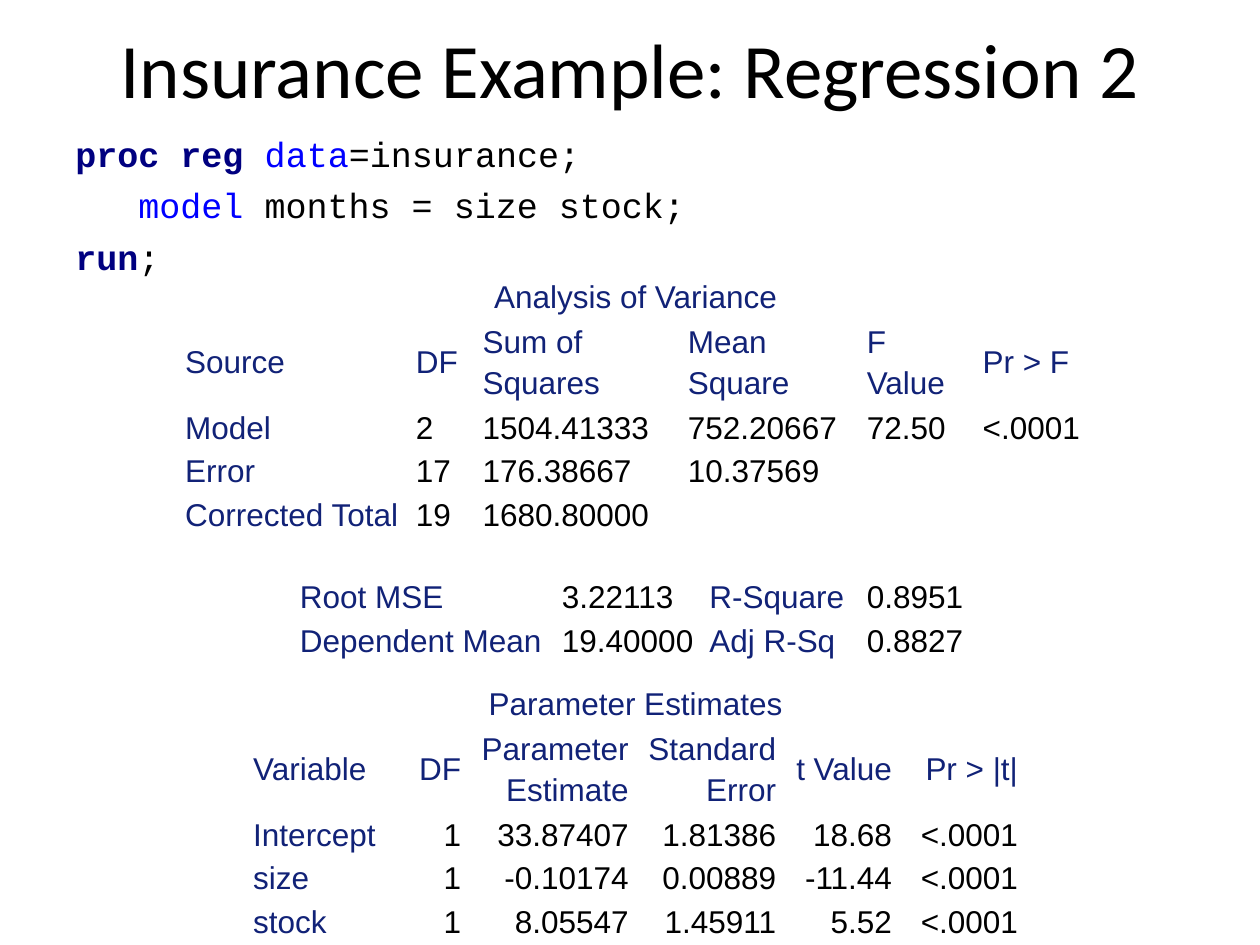
import dataclasses
import typing

import pptx
import pptx.dml.color
import pptx.enum.text
import pptx.util

Inches = pptx.util.Inches
Pt = pptx.util.Pt
Align = pptx.enum.text.PP_ALIGN
Anchor = pptx.enum.text.MSO_ANCHOR

BLACK, NAVY, BLUE, LABEL = "000000", "000080", "0000FF", "112277"
LINE = 0.32  # height of one line of table text, in inches


@dataclasses.dataclass
class Run:
    text: str
    hue: str = BLACK
    bold: bool = False


@dataclasses.dataclass
class Grid:
    left: float
    top: float
    widths: list[float]
    rows: list[list[str]]
    title: str = ""
    heads: int = 0  # heading rows, title included
    labels: tuple[int, ...] = (0,)  # columns that hold row names
    align: typing.Any = Align.LEFT  # alignment of the value columns


def apply(item: typing.Any, values: dict[str, typing.Any]) -> None:
    for name, value in values.items():
        setattr(item, name, value)


def style(font: typing.Any, face: str, size: float, hue: str, bold: bool = False) -> None:
    apply(font, {"name": face, "size": Pt(size), "bold": bold})
    font.color.rgb = pptx.dml.color.RGBColor.from_string(hue)


def add_box(slide: typing.Any, left: float, top: float, width: float,
            height: float, anchor: typing.Any) -> typing.Any:
    box = slide.shapes.add_textbox(*map(Inches, (left, top, width, height)))
    apply(box.text_frame, {"word_wrap": True, "vertical_anchor": anchor})
    return box.text_frame


def add_code(frame: typing.Any, lines: list[tuple[float, list[Run]]]) -> None:
    for num, (indent, runs) in enumerate(lines):
        para = frame.add_paragraph() if num else frame.paragraphs[0]
        para.space_before = Pt(5.5)
        para._p.get_or_add_pPr().set("marL", str(Inches(indent)))
        for part in runs:
            run = para.add_run()
            run.text = part.text
            style(run.font, "Courier New", 20, part.hue, part.bold)


def fill_cell(cell: typing.Any, text: str, hue: str, align: typing.Any) -> None:
    cell.fill.background()
    apply(cell, {"margin_left": Inches(0.05), "margin_right": Inches(0.05),
                 "margin_top": 0, "margin_bottom": 0,
                 "vertical_anchor": Anchor.MIDDLE})
    para = cell.text_frame.paragraphs[0]
    para.text = text
    apply(para, {"alignment": align, "line_spacing": 1.15,
                 "space_before": Pt(5), "space_after": Pt(5)})
    for run in para.runs:
        style(run.font, "Arial", 18, hue)


def add_grid(slide: typing.Any, grid: Grid) -> None:
    count = len(grid.widths)
    rows = list(grid.rows)
    if grid.title:
        rows.insert(0, [grid.title])
    tall = [LINE * (2 if any("\v" in text for text in row) else 1) for row in rows]
    table = slide.shapes.add_table(
        len(rows), count, Inches(grid.left), Inches(grid.top),
        Inches(sum(grid.widths)), Inches(sum(tall))).table
    apply(table, {"first_row": False, "horz_banding": False})
    for col, width in zip(table.columns, grid.widths):
        col.width = Inches(width)
    for y, row in enumerate(rows):
        table.rows[y].height = Inches(tall[y])
        for x in range(count):
            text = row[x] if x < len(row) else ""
            named = y < grid.heads or x in grid.labels
            align = Align.LEFT if x in grid.labels else grid.align
            if grid.title and y == 0:
                align = Align.CENTER
            fill_cell(table.cell(y, x), text, LABEL if named else BLACK, align)
    if grid.title:
        table.cell(0, 0).merge(table.cell(0, count - 1))


CODE = [
    (0, [Run("proc reg ", NAVY, True), Run("data", BLUE), Run("=insurance;")]),
    (0.5, [Run("model", BLUE), Run(" months = size stock;")]),
    (0, [Run("run", NAVY, True), Run(";")]),
]

GRIDS = [
    Grid(1.42, 2.17, [1.83, 0.53, 1.63, 1.42, 0.92, 0.92], [
        ["Source", "DF", "Sum of\vSquares", "Mean\vSquare", "F Value", "Pr > F"],
        ["Model", "2", "1504.41333", "752.20667", "72.50", "<.0001"],
        ["Error", "17", "176.38667", "10.37569"],
        ["Corrected Total", "19", "1680.80000"],
    ], title="Analysis of Variance", heads=2),
    Grid(2.33, 4.55, [2.08, 1.17, 1.25, 0.92], [
        ["Root MSE", "3.22113", "R-Square", "0.8951"],
        ["Dependent Mean", "19.40000", "Adj R-Sq", "0.8827"],
    ], labels=(0, 2)),
    Grid(1.96, 5.4, [1.2, 0.55, 1.33, 1.17, 0.92, 1], [
        ["Variable", "DF", "Parameter\vEstimate", "Standard\vError", "t Value", "Pr > |t|"],
        ["Intercept", "1", "33.87407", "1.81386", "18.68", "<.0001"],
        ["size", "1", "-0.10174", "0.00889", "-11.44", "<.0001"],
        ["stock", "1", "8.05547", "1.45911", "5.52", "<.0001"],
    ], title="Parameter Estimates", heads=2, align=Align.RIGHT),
]


def main() -> None:
    deck = pptx.Presentation()
    apply(deck, {"slide_width": Inches(10), "slide_height": Inches(7.5)})
    slide = deck.slides.add_slide(deck.slide_layouts[6])

    # Title
    para = add_box(slide, 0.5, 0, 9, 1.08, Anchor.MIDDLE).paragraphs[0]
    para.text = "Insurance Example: Regression 2"
    para.alignment = Align.CENTER
    style(para.runs[0].font, "Calibri", 44, BLACK)

    # Program code
    add_code(add_box(slide, 0.5, 1, 9.5, 1.33, Anchor.TOP), CODE)

    # Result tables
    for grid in GRIDS:
        add_grid(slide, grid)

    deck.save("out.pptx")


if __name__ == "__main__":
    main()
